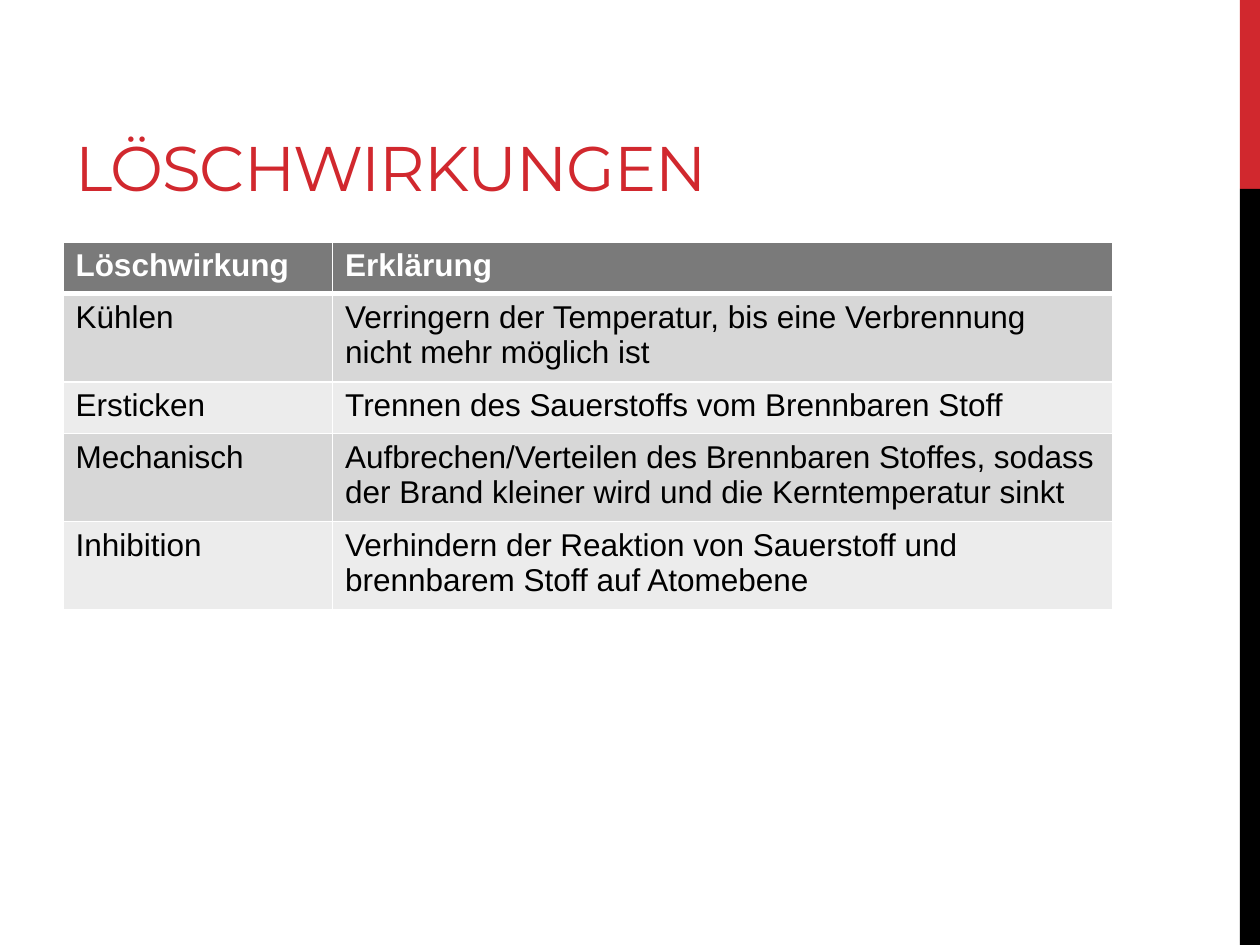
from lxml.etree import SubElement
from pptx import Presentation
from pptx.dml.color import RGBColor
from pptx.enum.shapes import MSO_SHAPE
from pptx.enum.text import MSO_ANCHOR
from pptx.oxml.ns import qn
from pptx.util import Inches, Pt

TITLE = "LÖSCHWIRKUNGEN"
ROWS = [
    ("Löschwirkung", "Erklärung"),
    ("Kühlen", "Verringern der Temperatur, bis eine Verbrennung nicht mehr möglich ist"),
    ("Ersticken", "Trennen des Sauerstoffs vom Brennbaren Stoff"),
    ("Mechanisch", "Aufbrechen/Verteilen des Brennbaren Stoffes, sodass der Brand kleiner wird und die Kerntemperatur sinkt"),
    ("Inhibition", "Verhindern der Reaktion von Sauerstoff und brennbarem Stoff auf Atomebene"),
]
COLUMN_WIDTHS = (2.14, 6.19)
ROW_HEIGHT = 0.41
SIDE_BARS = [(0, 1.5, "D1282E"), (1.5, 6, "000000")]
RED, WHITE, BLACK = "D1282E", "FFFFFF", "000000"
HEADER_FILL, BAND_FILLS = "7A7A7A", ("ECECEC", "D7D7D7")


def rgb(value):
    return RGBColor.from_string(value)


def style_font(paragraph, name, size, color, bold=False):
    font = paragraph.font
    font.name, font.size, font.bold = name, Pt(size), bold
    font.color.rgb = rgb(color)


def add_bar(slide, top, height, color):
    bar = slide.shapes.add_shape(
        MSO_SHAPE.RECTANGLE, Inches(9.84), Inches(top), Inches(0.16), Inches(height))
    bar.shadow.inherit = False
    bar.fill.solid()
    bar.fill.fore_color.rgb = rgb(color)
    bar.line.fill.background()


def add_title(slide):
    box = slide.shapes.add_textbox(Inches(0.5), Inches(0.17), Inches(6.33), Inches(1.5))
    frame = box.text_frame
    frame.word_wrap = True
    frame.vertical_anchor = MSO_ANCHOR.BOTTOM
    paragraph = frame.paragraphs[0]
    run = paragraph.add_run()
    run.text = TITLE
    style_font(paragraph, "Montserrat", 36, RED)
    run.font._element.set("spc", "-60")


def set_borders(cell, widths):
    properties = cell._tc.get_or_add_tcPr()
    for side, width in widths.items():
        line = SubElement(properties, qn(f"a:ln{side}"), w=str(Pt(width)))
        fill = SubElement(line, qn("a:solidFill"))
        SubElement(fill, qn("a:srgbClr"), val=WHITE)


def add_effects_table(slide):
    table = slide.shapes.add_table(
        len(ROWS), len(COLUMN_WIDTHS), Inches(0.5), Inches(1.92),
        Inches(sum(COLUMN_WIDTHS)), Inches(ROW_HEIGHT * len(ROWS))).table
    for column, width in zip(table.columns, COLUMN_WIDTHS):
        column.width = Inches(width)
    for row_index, texts in enumerate(ROWS):
        header = row_index == 0
        table.rows[row_index].height = Inches(ROW_HEIGHT)
        for column_index, text in enumerate(texts):
            cell = table.cell(row_index, column_index)
            cell.text = text
            style_font(cell.text_frame.paragraphs[0], "Arial", 18,
                       WHITE if header else BLACK, header)
            set_borders(cell, {"L": 1, "R": 1, "T": 3 if row_index == 1 else 1,
                               "B": 3 if header else 1})
            cell.fill.solid()
            cell.fill.fore_color.rgb = rgb(HEADER_FILL if header else BAND_FILLS[row_index % 2])


def main():
    presentation = Presentation()
    presentation.slide_width, presentation.slide_height = Inches(10), Inches(7.5)
    slide = presentation.slides.add_slide(presentation.slide_layouts[6])
    for top, height, color in SIDE_BARS:
        add_bar(slide, top, height, color)
    add_title(slide)
    add_effects_table(slide)
    presentation.save("out.pptx")


if __name__ == "__main__":
    main()
